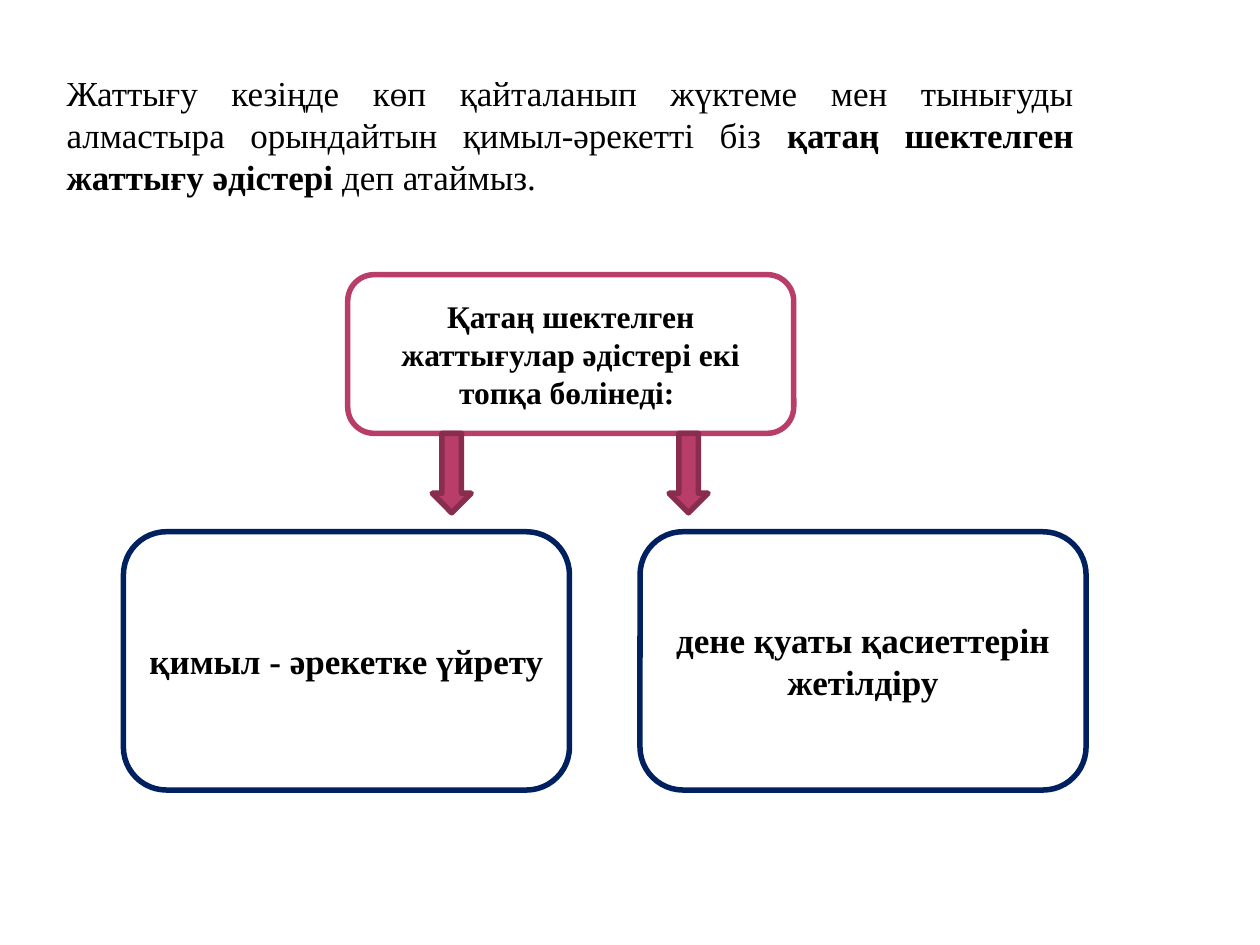
"""Build a slide that splits strictly regulated exercise methods into two groups."""
from dataclasses import dataclass

from pptx import Presentation
from pptx.dml.color import RGBColor
from pptx.enum.shapes import MSO_SHAPE
from pptx.enum.text import MSO_ANCHOR, PP_ALIGN
from pptx.util import Emu, Pt

ROUNDED = MSO_SHAPE.ROUNDED_RECTANGLE
DOWN_ARROW = MSO_SHAPE.DOWN_ARROW
MIDDLE = MSO_ANCHOR.MIDDLE
CENTER = PP_ALIGN.CENTER
JUSTIFY = PP_ALIGN.JUSTIFY

EMU_PER_PX = 9144
LINE_WIDTH = Pt(3.15)
BLANK_LAYOUT = 6
COLORS = {
    "paper": "FFFFFF",
    "ink": "000000",
    "berry": "B83D68",
    "plum": "882D4D",
    "navy": "002060",
}


@dataclass(frozen=True)
class Node:
    left: int
    top: int
    width: int
    height: int
    fill: str
    line: str
    kind: int = ROUNDED
    text: str = ""
    size: int = 20


def px(length: int) -> Emu:
    return Emu(length * EMU_PER_PX)


def rgb(name: str) -> RGBColor:
    return RGBColor.from_string(COLORS[name])


def add_run(paragraph, text: str, size: int, bold: bool) -> None:
    run = paragraph.add_run()
    run.text = text
    formats = {"name": "Times New Roman", "size": Pt(size), "bold": bold}
    for attribute, value in formats.items():
        setattr(run.font, attribute, value)
    run.font.color.rgb = rgb("ink")


def draw_definition(slide, parts: list[tuple[str, bool]]) -> None:
    definition = slide.shapes.add_textbox(px(43), px(52), px(819), px(111))
    definition.text_frame.word_wrap = True
    paragraph = definition.text_frame.paragraphs[0]
    paragraph.alignment = JUSTIFY
    for text, bold in parts:
        add_run(paragraph, text, 20, bold)


def draw_node(slide, node: Node) -> None:
    shape = slide.shapes.add_shape(
        node.kind, px(node.left), px(node.top), px(node.width), px(node.height)
    )
    shape.shadow.inherit = False
    shape.fill.solid()
    shape.fill.fore_color.rgb = rgb(node.fill)
    shape.line.color.rgb = rgb(node.line)
    shape.line.width = LINE_WIDTH
    if node.text:
        frame = shape.text_frame
        frame.word_wrap = True
        frame.vertical_anchor = MIDDLE
        frame.paragraphs[0].alignment = CENTER
        add_run(frame.paragraphs[0], node.text, node.size, True)


def main() -> None:
    presentation = Presentation()
    presentation.slide_width = px(1000)
    presentation.slide_height = px(750)
    slide = presentation.slides.add_slide(presentation.slide_layouts[BLANK_LAYOUT])

    draw_definition(slide, [
        ("Жаттығу кезіңде көп қайталанып жүктеме мен тынығуды алмастыра "
         "орындайтын қимыл-әрекетті біз ", False),
        ("қатаң шектелген жаттығу әдістері ", True),
        ("деп атаймыз. ", False),
    ])

    methods = Node(276, 218, 354, 126, "paper", "berry", size=18,
                   text="Қатаң шектелген жаттығулар әдістері екі топқа бөлінеді: ")
    groups = [
        Node(left, 422, methods.width, 205, "paper", "navy", text=text)
        for left, text in (
            (98, "қимыл - әрекетке үйрету "),
            (508, "дене қуаты қасиеттерін жетілдіру"),
        )
    ]
    arrows = [
        Node(left, methods.top + methods.height, 31, 63, "berry", "plum", DOWN_ARROW)
        for left in (343, 531)
    ]
    for node in [methods, *groups, *arrows]:
        draw_node(slide, node)

    presentation.save("out.pptx")


if __name__ == "__main__":
    main()
